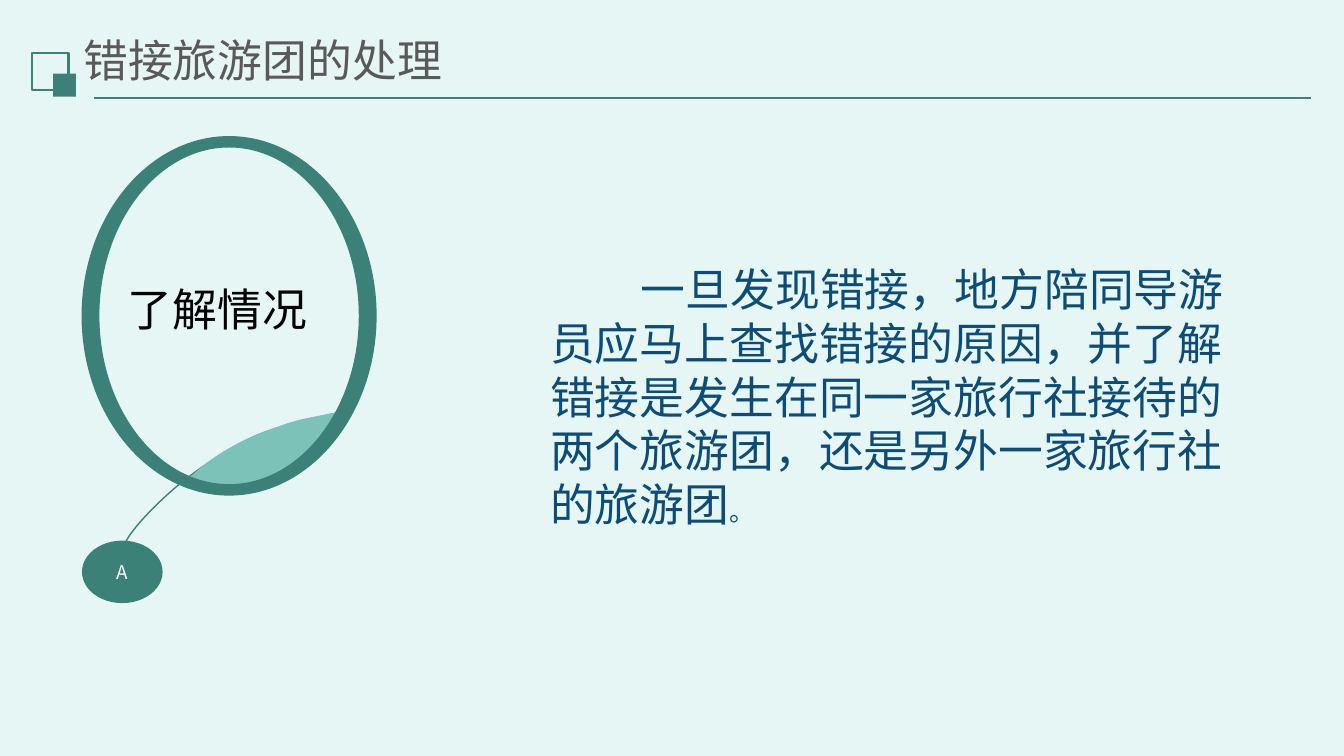
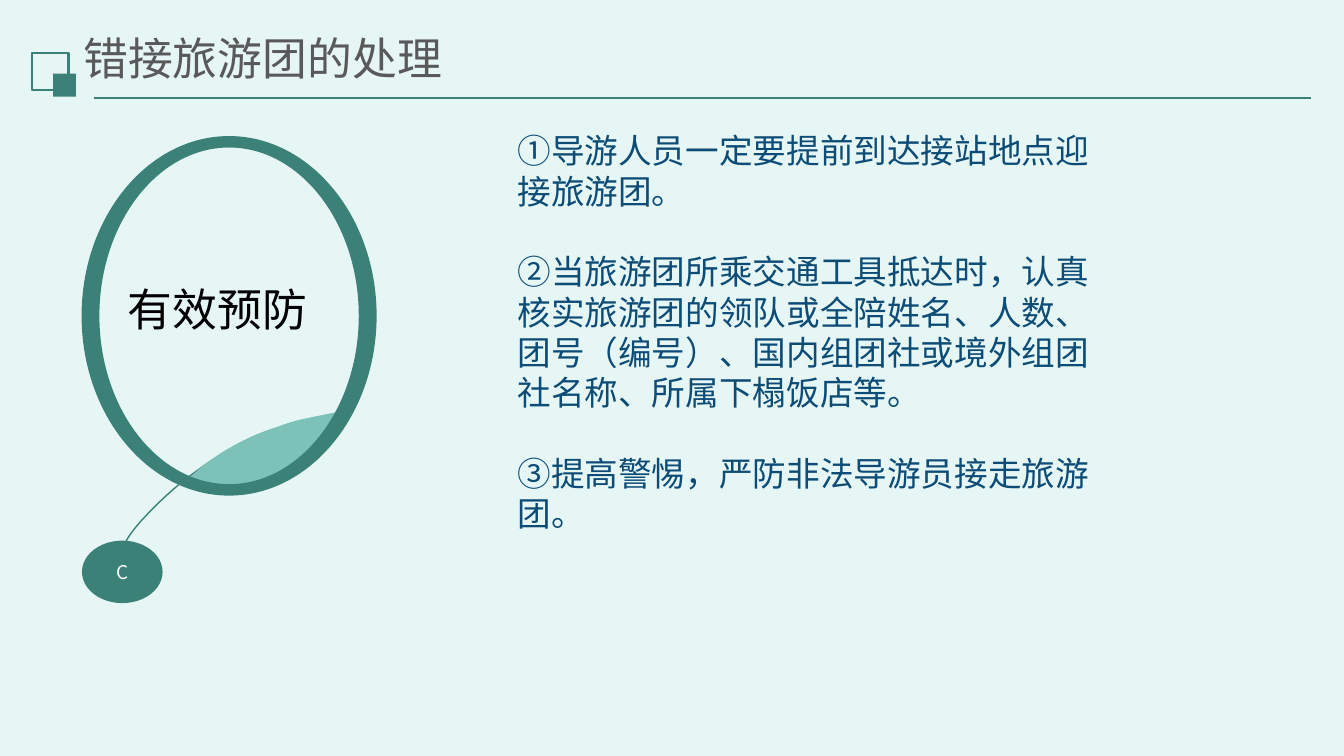
from itertools import chain

from lxml.etree import SubElement
from pptx import Presentation
from pptx.dml.color import RGBColor
from pptx.enum.shapes import MSO_CONNECTOR as Connector, MSO_SHAPE as Shape
from pptx.enum.text import MSO_ANCHOR as Anchor, PP_ALIGN as Align
from pptx.oxml.ns import qn
from pptx.util import Emu, Pt

CELL = 304800  # a third of an inch: the slide is 40 columns by 22.5 rows
COLUMNS, ROWS = 40, 22.5
FONT = "Noto Sans CJK SC"
MIST, TEAL, AQUA = "E6F6F4", "3C8178", "7CC2B9"
NAVY, GRAY, BLACK, WHITE = "0D4C77", "595959", "000000", "FEFFFF"
LEADING = 1.2
ARC = 0.55  # handle length of a quarter ellipse, as a share of its radius

# An outline is a start point, then segments: one point is a line, three a curve.
STEM = [(10.17, 12.27),
        [(9.24, 12.45), (8.34, 12.66), (7.56, 12.99)],
        [(6.78, 13.35), (6.09, 13.83), (5.46, 14.31)],
        [(4.83, 14.82), (4.14, 15.51), (3.84, 15.96)],
        [(3.54, 16.41), (3.63, 16.74), (3.72, 17.07)]]
LEAF = [(10.17, 12.24),
        [(10.14, 12.24), (10.05, 12.39), (10.05, 12.39)],
        [(9.6, 13.74), (7.74, 14.73), (6.9, 14.7)],
        [(6.39, 14.67), (6.12, 14.58), (5.76, 14.4)],
        [(5.61, 14.28)],
        [(5.7, 14.16)],
        [(6.3, 13.59), (7.14, 13.08), (8.22, 12.72)],
        [(8.52, 12.6), (8.82, 12.51), (9.12, 12.45)],
        [(9.27, 12.42), (9.99, 12.27), (10.17, 12.24)]]
RING_CENTER, RING_OUTER, RING_INNER = (6.82, 9.4), (4.37, 5.33), (3.88, 5.03)


def color(code):
    return RGBColor.from_string(code)


def cells(*lengths):
    return [Emu(round(length * CELL)) for length in lengths]


def oval(center, radii, turn=1):
    """Outline an ellipse from its top; turn -1 runs the other way round."""
    def at(across, down):
        return (center[0] + turn * across * radii[0], center[1] + down * radii[1])

    corners = [(0, -1), (1, 0), (0, 1), (-1, 0), (0, -1)]
    outline = [at(*corners[0])]
    for (x1, y1), (x2, y2) in zip(corners, corners[1:]):
        outline.append([at(x1 + ARC * x2, y1 + ARC * y2),
                        at(x2 + ARC * x1, y2 + ARC * y1), at(x2, y2)])
    return outline


class Painter:
    """Holds the deck's style and the slide being drawn; lengths are grid cells."""

    def __init__(self):
        self.deck = Presentation()
        self.deck.slide_width, self.deck.slide_height = cells(COLUMNS, ROWS)
        background = self.deck.slide_master.background.fill
        background.solid()
        background.fore_color.rgb = color(MIST)
        self.page = self.shapes = None

    def new_page(self):
        self.page = self.deck.slides.add_slide(self.deck.slide_layouts[6])
        self.shapes = self.page.shapes

    def open_group(self):
        self.shapes = self.page.shapes.add_group_shape().shapes

    def close_group(self):
        self.shapes = self.page.shapes

    def paint(self, shape, fill=None, line=None, width=1):
        shape.shadow.inherit = False
        if fill:
            shape.fill.solid()
            shape.fill.fore_color.rgb = color(fill)
        else:
            shape.fill.background()
        if line:
            shape.line.color.rgb = color(line)
            shape.line.width = Pt(width)
        else:
            shape.line.fill.background()
        return shape

    def shape(self, kind, place, **style):
        return self.paint(self.shapes.add_shape(kind, *cells(*place)), **style)

    def outline(self, *contours, closed=True, **style):
        """Draw contours as one freeform and bend its three-point segments."""
        builder = None
        for start, *segments in contours:
            if builder is None:
                builder = self.shapes.build_freeform(*cells(*start), scale=1.0)
            else:
                builder.move_to(*cells(*start))
            builder.add_line_segments([cells(*segment[-1]) for segment in segments],
                                      close=closed)
        shape = builder.convert_to_shape()
        segments = chain.from_iterable(contour[1:] for contour in contours)
        for step, segment in zip(list(shape._element.iter(qn("a:lnTo"))), segments):
            if len(segment) == 1:
                continue
            step.tag = qn("a:cubicBezTo")
            for index, control in enumerate(segment[:-1]):
                x, y = cells(*control)
                point = SubElement(step, qn("a:pt"),
                                   x=str(x - shape.left), y=str(y - shape.top))
                step.insert(index, point)
        return self.paint(shape, **style)

    def rule(self, left, right, top):
        line = self.shapes.add_connector(
            Connector.STRAIGHT, *cells(left, top, right, top))
        line.line.color.rgb = color(TEAL)
        line.line.width = Pt(1.25)
        SubElement(line._element.spPr, qn("a:effectLst"))

    def span(self, para, text, size, ink):
        span = para.add_run()
        span.text = text
        span.font.size = Pt(size)
        span.font.color.rgb = color(ink)
        span.font.name = FONT
        SubElement(span._r.get_or_add_rPr(), qn("a:ea"), typeface=FONT)

    def text(self, place, paragraphs, ink, align=Align.LEFT, anchor=Anchor.TOP,
             inset=(0.3, 0.15), spacing=None, gap=0, indent=0):
        """Add a text box; each paragraph is a list of (text, size) runs."""
        box = self.shapes.add_textbox(*cells(*place))
        frame = box.text_frame
        frame.word_wrap = True
        frame.vertical_anchor = anchor
        frame.margin_left, frame.margin_top = cells(*inset)
        frame.margin_right, frame.margin_bottom = cells(*inset)
        for number, runs in enumerate(paragraphs):
            para = frame.add_paragraph() if number else frame.paragraphs[0]
            para.alignment = align
            para.line_spacing = spacing or Pt(runs[0][1] * LEADING)
            if number:
                para.space_before = Pt(gap)
            if indent:
                para._p.get_or_add_pPr().set("indent", str(Pt(indent)))
            for text, size in runs:
                self.span(para, text, size, ink)

    def header(self, title, top):
        self.open_group()
        self.text((2.26, top, 19.35, 1.68), [[(title, 32)]], GRAY,
                  anchor=Anchor.MIDDLE, inset=(0.22, 0.12), spacing=0.9)
        self.rule(2.79, 39.03, 2.91)
        self.shape(Shape.RECTANGLE, (0.96, 1.58, 1.08, 1.1), line=TEAL, width=1.5)
        self.shape(Shape.RECTANGLE, (1.58, 2.19, 0.68, 0.69), fill=TEAL)
        self.close_group()

    def balloon(self, letter, caption):
        """Draw the captioned ring with its leaf, stem and lettered dot."""
        self.open_group()
        self.outline(STEM, closed=False, line=TEAL)
        self.outline(LEAF, fill=AQUA)
        self.outline(oval(RING_CENTER, RING_INNER, turn=-1),
                     oval(RING_CENTER, RING_OUTER), fill=TEAL, line=TEAL)
        dot = self.shape(Shape.OVAL, (2.44, 16.09, 2.4, 1.86), fill=TEAL)
        dot.text_frame.vertical_anchor = Anchor.MIDDLE
        para = dot.text_frame.paragraphs[0]
        para.alignment = Align.CENTER
        self.span(para, letter, 13.5, WHITE)
        self.text((2.45, 8.25, 8.04, 1.92), [[(caption, 32)]], BLACK,
                  align=Align.CENTER)
        self.close_group()


def main():
    painter = Painter()
    title = "错接旅游团的处理"

    painter.new_page()
    painter.balloon("A", "了解情况")
    painter.text((16.08, 7.64, 20.79, 8.46), [[
        ("一旦发现错接，地方陪同导游员应马上查找错接的原因，并了解错接是发生在"
         "同一家旅行社接待的两个旅游团，还是另外一家旅行社的旅游团", 32),
        ("。", 18)]], NAVY, indent=64.8)
    painter.header(title, 1.03)

    painter.new_page()
    measures = [
        "①导游人员一定要提前到达接站地点迎接旅游团。",
        "②当旅游团所乘交通工具抵达时，认真核实旅游团的领队或全陪姓名、人数、"
        "团号（编号）、国内组团社或境外组团社名称、所属下榻饭店等。",
        "③提高警惕，严防非法导游员接走旅游团。",
    ]
    painter.text((15.11, 3.73, 18.03, 14.85), [[(measure, 24)] for measure in measures],
                 NAVY, gap=24 * LEADING)
    painter.header(title, 0.96)
    painter.balloon("C", "有效预防")

    painter.deck.save("out.pptx")


if __name__ == "__main__":
    main()
